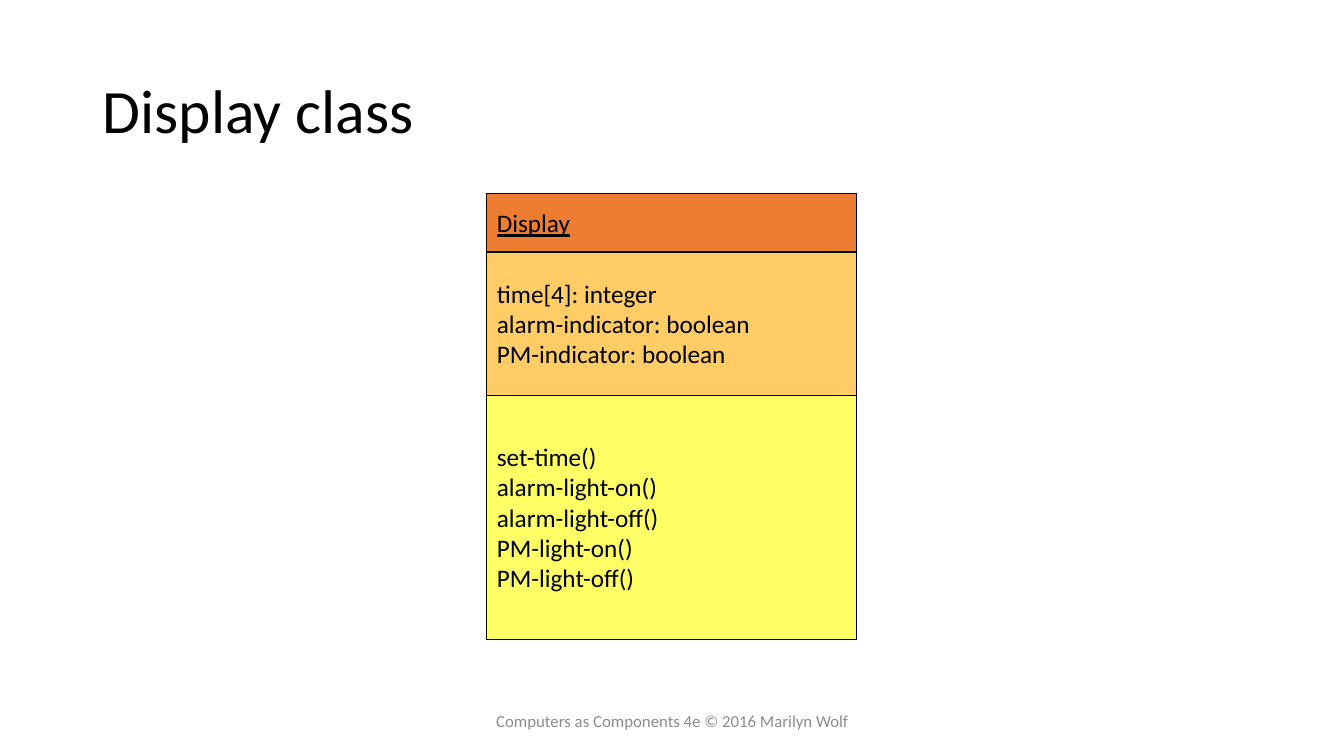
from pptx import Presentation
from pptx.dml.color import RGBColor
from pptx.enum.shapes import MSO_SHAPE
from pptx.enum.text import MSO_ANCHOR, PP_ALIGN
from pptx.util import Inches, Pt

TITLE = "Display class"
COMPARTMENTS = [
    ("ED7D31", 0.58, ["Display"], {"underline": True}),
    ("FFCC66", 1.42, ["time[4]: integer", "alarm-indicator: boolean",
                      "PM-indicator: boolean"], {}),
    ("FFFF66", 2.42, ["set-time()", "alarm-light-on()", "alarm-light-off()",
                      "PM-light-on()", "PM-light-off()"], {}),
]
FOOTER = "Computers as Components 4e © 2016 Marilyn Wolf"

CLASS_LEFT, CLASS_TOP, CLASS_WIDTH = 4.83, 1.92, 3.67
TITLE_FONT = {"name": "Calibri", "size": Pt(44)}
CLASS_FONT = {"name": "Calibri", "size": Pt(18)}
FOOTER_FONT = {"name": "Calibri", "size": Pt(12)}


def color(value):
    return RGBColor.from_string(value)


def write(box, lines, font, ink, **paragraph_format):
    frame = box.text_frame
    frame.word_wrap = True
    frame.vertical_anchor = MSO_ANCHOR.MIDDLE
    frame.text = "\n".join(lines)
    for paragraph in frame.paragraphs:
        for key, value in paragraph_format.items():
            setattr(paragraph, key, value)
        for run in paragraph.runs:
            for key, value in font.items():
                setattr(run.font, key, value)
            run.font.color.rgb = color(ink)


def place(box, left, top, width, height):
    box.left, box.top = Inches(left), Inches(top)
    box.width, box.height = Inches(width), Inches(height)


def main():
    deck = Presentation()
    deck.slide_width, deck.slide_height = Inches(13.33), Inches(7.5)
    slide = deck.slides.add_slide(deck.slide_layouts[5])

    title = slide.shapes.title
    place(title, 0.92, 0.4, 11.5, 1.45)
    write(title, [TITLE], TITLE_FONT, "000000",
          alignment=PP_ALIGN.LEFT, line_spacing=0.9)

    top = CLASS_TOP
    for fill, height, members, emphasis in COMPARTMENTS:
        compartment = slide.shapes.add_shape(
            MSO_SHAPE.RECTANGLE, Inches(CLASS_LEFT), Inches(top),
            Inches(CLASS_WIDTH), Inches(height))
        compartment.shadow.inherit = False
        compartment.fill.solid()
        compartment.fill.fore_color.rgb = color(fill)
        compartment.line.color.rgb = color("000000")
        compartment.line.width = Pt(0.75)
        write(compartment, members, {**CLASS_FONT, **emphasis}, "000000",
              alignment=PP_ALIGN.LEFT)
        top += height

    footer = slide.shapes.add_textbox(
        Inches(4.42), Inches(6.95), Inches(4.5), Inches(0.4))
    write(footer, [FOOTER], FOOTER_FONT, "8C8C8C", alignment=PP_ALIGN.CENTER)

    deck.save("out.pptx")


if __name__ == "__main__":
    main()
